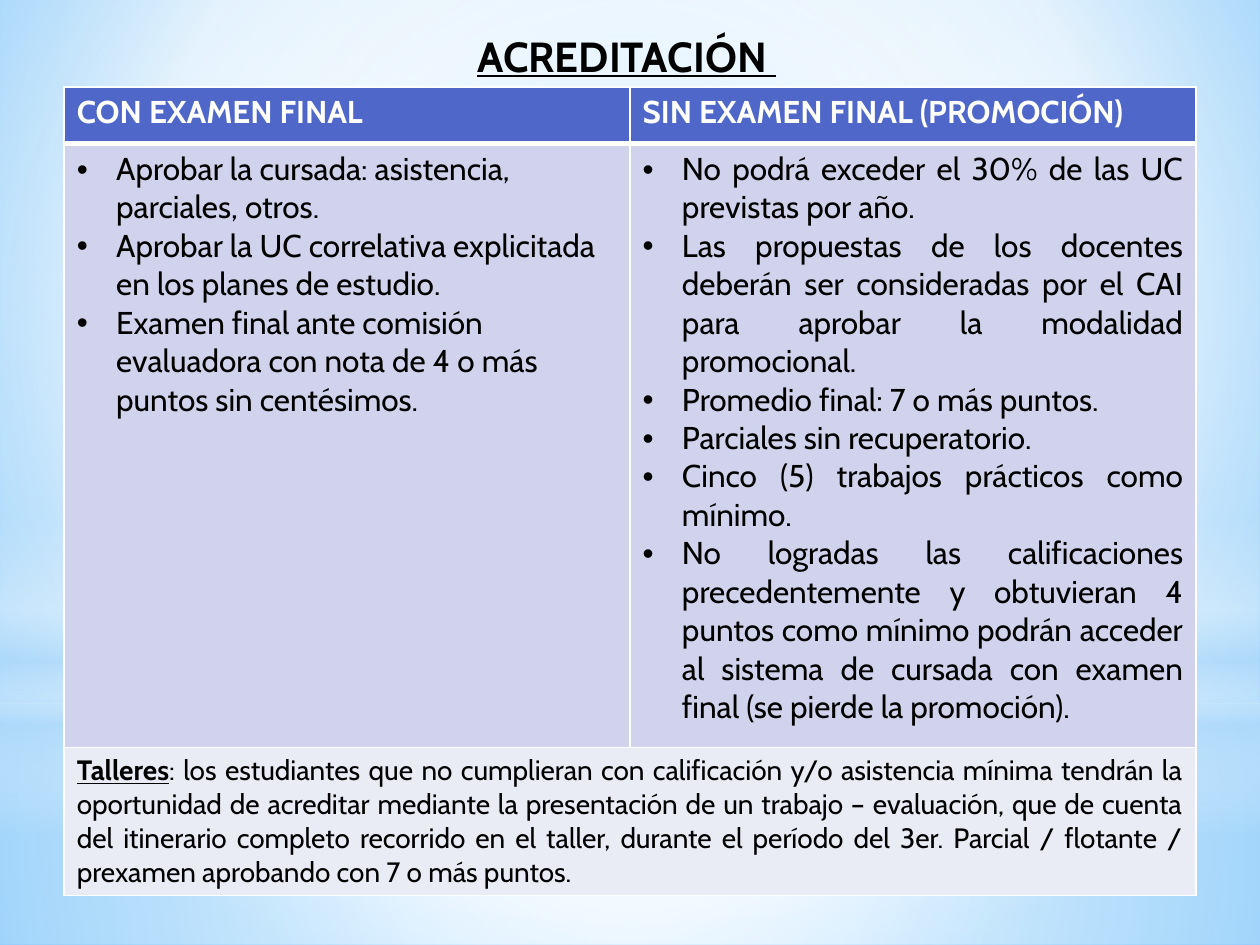
"""Build the accreditation slide: a titled two-column requirements table on a sky background."""
from dataclasses import dataclass

import pptx
import pptx.dml.color
import pptx.enum.shapes
import pptx.enum.text
import pptx.oxml.ns
import pptx.util
from lxml import etree

Pt = pptx.util.Pt
qn = pptx.oxml.ns.qn
RECTANGLE = pptx.enum.shapes.MSO_SHAPE.RECTANGLE
OVAL = pptx.enum.shapes.MSO_SHAPE.OVAL
JUSTIFY = pptx.enum.text.PP_ALIGN.JUSTIFY
CENTRE = (50, 50, 50, 50)


@dataclass(frozen=True)
class Theme:
    font: str = "Cabin"
    ink: str = "000000"
    white: str = "FFFFFF"
    sky: str = "B4DCFA"
    sky_light: str = "9ED5FF"
    sky_deep: str = "5BB9FF"
    header: str = "4E67C8"
    body: str = "D0D3EB"
    note: str = "E9EBF5"
    title_size: int = 24
    body_size: int = 18
    note_size: int = 16


THEME = Theme()

WITH_EXAM = (
    "Aprobar la cursada: asistencia, parciales, otros.",
    "Aprobar la UC correlativa explicitada en los planes de estudio.",
    "Examen final ante comisión evaluadora con nota de 4 o más puntos sin centésimos.",
)
WITHOUT_EXAM = (
    "No podrá exceder el 30% de las UC previstas por año.",
    "Las propuestas de los docentes deberán ser consideradas por el CAI para aprobar "
    "la modalidad promocional. ",
    "Promedio final: 7 o más puntos.",
    "Parciales sin recuperatorio.",
    "Cinco (5) trabajos prácticos como mínimo.",
    "No logradas las calificaciones precedentemente y obtuvieran 4 puntos como mínimo "
    "podrán acceder al sistema de cursada con examen final (se pierde la promoción).",
)
WORKSHOPS = (
    ": los estudiantes que no cumplieran con calificación y/o asistencia mínima tendrán "
    "la oportunidad de acreditar mediante la presentación de un trabajo – evaluación, que "
    "de cuenta del itinerario completo recorrido en el taller, durante el período del 3er. "
    "Parcial / flotante / prexamen aprobando con 7 o más puntos."
)


def add_node(parent, tag, **attributes):
    return etree.SubElement(parent, qn(tag), {k: str(v) for k, v in attributes.items()})


def paint_gradient(properties, stops, focus=None):
    """Swap a solid fill for a gradient, circular around focus or else vertical."""
    solid = properties.find(qn("a:solidFill"))
    gradient = etree.Element(qn("a:gradFill"), rotWithShape="1")
    stop_list = add_node(gradient, "a:gsLst")
    for position, color, opacity in stops:
        stop = add_node(stop_list, "a:gs", pos=position * 1000)
        tint = add_node(stop, "a:srgbClr", val=color)
        if opacity < 100:
            add_node(tint, "a:alpha", val=opacity * 1000)
    if focus:
        circle = add_node(gradient, "a:path", path="circle")
        edges = {side: inset * 1000 for side, inset in zip("ltrb", focus)}
        add_node(circle, "a:fillToRect", **edges)
    else:
        add_node(gradient, "a:lin", ang=5400000, scaled=0)
    properties.replace(solid, gradient)


def add_glow(slide, outline, top, height, stops, focus=CENTRE):
    glow = slide.shapes.add_shape(outline, 0, Pt(top), Pt(720), Pt(height))
    glow.shadow.inherit = False
    glow.line.fill.background()
    glow.fill.solid()
    paint_gradient(glow.element.spPr, stops, focus)


def add_sky(slide):
    white, sky = THEME.white, THEME.sky
    slide.background.fill.solid()
    backdrop = slide.element.xpath("p:cSld/p:bg/p:bgPr")[0]
    paint_gradient(
        backdrop,
        [(0, THEME.sky_light, 100), (60, white, 100), (100, THEME.sky_deep, 100)],
        (20, 10, 20, 60),
    )
    horizon = 401.8
    add_glow(slide, RECTANGLE, horizon, 540 - horizon,
             [(0, white, 91), (37, white, 76), (100, sky, 79)])
    add_glow(slide, RECTANGLE, 0, horizon,
             [(0, white, 89), (48, white, 62), (100, sky, 79)])
    add_glow(slide, RECTANGLE, 296.6, 180,
             [(0, white, 0), (29, white, 30), (45, sky, 40),
              (55, white, 26), (65, sky, 60), (100, white, 0)], None)
    add_glow(slide, OVAL, 126, horizon, [(0, white, 100), (56, white, 0)])


def add_run(paragraph, text, size, color=THEME.ink, bold=False, underline=False):
    run = paragraph.add_run()
    run.text = text
    run.font.name = THEME.font
    run.font.size = Pt(size)
    run.font.bold = bold
    run.font.underline = underline
    run.font.color.rgb = pptx.dml.color.RGBColor.from_string(color)


def add_title(slide, text):
    title = slide.shapes.add_textbox(Pt(265.7), Pt(13.7), Pt(185), Pt(36))
    frame = title.text_frame
    frame.word_wrap = False
    frame.auto_size = pptx.enum.text.MSO_AUTO_SIZE.SHAPE_TO_FIT_TEXT
    add_run(frame.paragraphs[0], text, THEME.title_size, bold=True, underline=True)


def style_cell(cell, color, top=1, bottom=1):
    cell.fill.solid()
    cell.fill.fore_color.rgb = pptx.dml.color.RGBColor.from_string(color)
    properties = cell._tc.get_or_add_tcPr()
    for order, (side, width) in enumerate(zip("LRTB", (1, 1, top, bottom))):
        border = add_node(properties, f"a:ln{side}", w=Pt(width))
        add_node(add_node(border, "a:solidFill"), "a:srgbClr", val=THEME.white)
        properties.insert(order, border)


def add_bullets(cell, requirements, alignment=None):
    frame = cell.text_frame
    for position, requirement in enumerate(requirements):
        paragraph = frame.add_paragraph() if position else frame.paragraphs[0]
        paragraph.alignment = alignment
        layout = paragraph._p.get_or_add_pPr()
        layout.set("marL", str(Pt(22.5)))
        layout.set("indent", str(-Pt(22.5)))
        add_node(layout, "a:buFont", typeface="Arial")
        add_node(layout, "a:buChar", char="•")
        add_run(paragraph, requirement, THEME.body_size)


def add_requirements(slide):
    frame = slide.shapes.add_table(3, 2, Pt(36.7), Pt(49.7), Pt(646.6), Pt(462))
    table = frame.table
    for row, height in zip(table.rows, (32.4, 345, 84.6)):
        row.height = Pt(height)
    columns = (
        ("CON EXAMEN FINAL", WITH_EXAM, None),
        ("SIN EXAMEN FINAL (PROMOCIÓN)", WITHOUT_EXAM, JUSTIFY),
    )
    for column, (heading, requirements, alignment) in enumerate(columns):
        header, body = table.cell(0, column), table.cell(1, column)
        style_cell(header, THEME.header, bottom=3)
        add_run(header.text_frame.paragraphs[0], heading, THEME.body_size, THEME.white, bold=True)
        style_cell(body, THEME.body, top=3)
        add_bullets(body, requirements, alignment)
        style_cell(table.cell(2, column), THEME.note)
    note = table.cell(2, 0)
    note.merge(table.cell(2, 1))
    paragraph = note.text_frame.paragraphs[0]
    paragraph.alignment = JUSTIFY
    add_run(paragraph, "Talleres", THEME.note_size, bold=True, underline=True)
    add_run(paragraph, WORKSHOPS, THEME.note_size)


def main():
    deck = pptx.Presentation()
    deck.slide_width, deck.slide_height = Pt(720), Pt(540)
    slide = deck.slides.add_slide(deck.slide_layouts[6])
    add_sky(slide)
    add_requirements(slide)
    add_title(slide, "ACREDITACIÓN ")
    deck.save("out.pptx")


if __name__ == "__main__":
    main()
